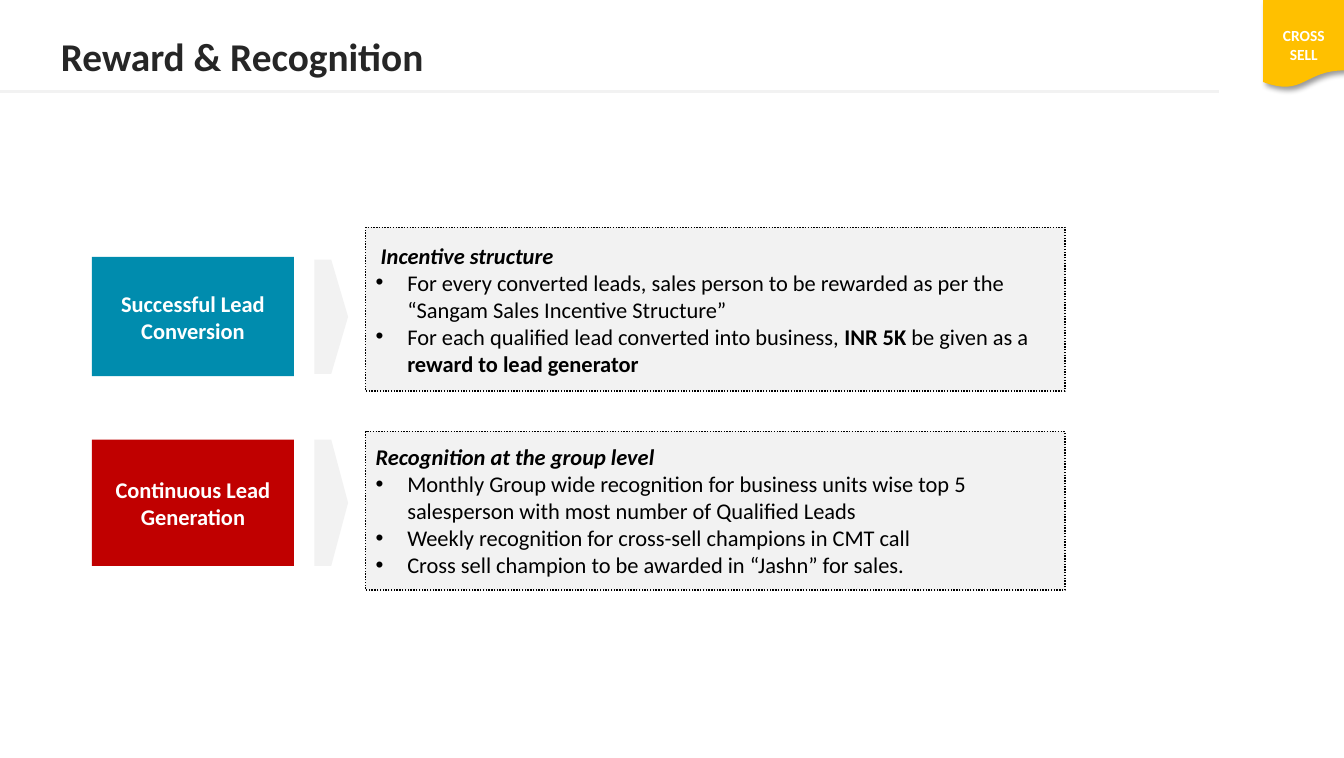
"""Build the Reward & Recognition slide with two reward rows."""
from dataclasses import dataclass

from lxml.etree import SubElement
from pptx import Presentation
from pptx.dml.color import RGBColor
from pptx.enum.dml import MSO_LINE
from pptx.enum.shapes import MSO_CONNECTOR, MSO_SHAPE
from pptx.enum.text import MSO_ANCHOR, PP_ALIGN
from pptx.oxml.ns import qn
from pptx.util import Pt


@dataclass(frozen=True)
class Theme:
    font: str = "Calibri"
    title_size: int = 28
    body_size: int = 16
    badge_size: int = 11
    white: str = "FFFFFF"
    black: str = "000000"
    heading: str = "262626"
    pale: str = "F2F2F2"
    amber: str = "FFC000"
    teal: str = "008CAE"
    red: str = "C00000"


theme = Theme()


def add_block(preset, left, top, width, height, color):
    block = slide.shapes.add_shape(preset, Pt(left), Pt(top), Pt(width), Pt(height))
    block.shadow.inherit = False
    block.fill.solid()
    block.fill.fore_color.rgb = RGBColor.from_string(color)
    block.line.fill.background()
    return block


def style(paragraph, size, color, bold=True, italic=False, align=PP_ALIGN.LEFT):
    paragraph.alignment = align
    for run in paragraph.runs:
        run.font.name = theme.font
        run.font.size = Pt(size)
        run.font.bold = bold
        run.font.italic = italic
        run.font.color.rgb = RGBColor.from_string(color)


deck = Presentation()
deck.slide_width, deck.slide_height = Pt(957.6), Pt(540)
slide = deck.slides.add_slide(deck.slide_layouts[6])

badge = add_block(MSO_SHAPE.FLOWCHART_DOCUMENT, 900, 0, 58, 62.6, theme.amber)
shadow = SubElement(badge.shadow._element.find(qn("a:effectLst")), qn("a:outerShdw"),
                    blurRad=str(Pt(4)), dist=str(Pt(3)), dir="2700000",
                    algn="tl", rotWithShape="0")
shade = SubElement(shadow, qn("a:srgbClr"), val=theme.black)
SubElement(shade, qn("a:alpha"), val="40000")
badge.text_frame.text = "CROSS SELL"
badge.text_frame.margin_top = Pt(17)
style(badge.text_frame.paragraphs[0], theme.badge_size, theme.white, align=PP_ALIGN.CENTER)

title = slide.shapes.add_textbox(Pt(30), Pt(19.4), Pt(612), Pt(36))
title.text_frame.word_wrap = True
title.text_frame.margin_left = Pt(13.5)
title.text_frame.text = "Reward & Recognition"
style(title.text_frame.paragraphs[0], theme.title_size, theme.heading)

rule = slide.shapes.add_connector(MSO_CONNECTOR.STRAIGHT, Pt(0), Pt(65), Pt(868.3), Pt(65))
rule.line.color.rgb = RGBColor.from_string(theme.pale)
rule.line.width = Pt(2.25)
SubElement(rule._element.spPr, qn("a:effectLst"))

rows = [
    dict(
        topic="Successful Lead Conversion", color=theme.teal,
        tag=(183, 85), arrow=(185, 81.4), panel=(162, 116.6),
        heading="Incentive structure", heading_indent=3.6,
        points=[
            [("For every converted leads, sales person to be rewarded as per the "
              "“Sangam Sales Incentive Structure”", False)],
            [("For each qualified lead converted into business, ", False), ("INR 5K", True),
             (" be given as a ", False), ("reward to lead generator", True)],
        ],
    ),
    dict(
        topic="Continuous Lead Generation", color=theme.red,
        tag=(313.2, 90), arrow=(313.2, 90), panel=(307.4, 113),
        heading="Recognition at the group level", heading_indent=0,
        points=[
            [("Monthly Group wide recognition for business units wise top 5 "
              "salesperson with most number of Qualified Leads", False)],
            [("Weekly recognition for cross-sell champions in CMT call", False)],
            [("Cross sell champion to be awarded in “Jashn” for sales.", False)],
        ],
    ),
]

for row in rows:
    top, height = row["tag"]
    tag = add_block(MSO_SHAPE.RECTANGLE, 65.5, top, 144, height, row["color"])
    tag.text_frame.text = row["topic"]
    style(tag.text_frame.paragraphs[0], theme.body_size, theme.white, align=PP_ALIGN.CENTER)

    top, height = row["arrow"]
    add_block(MSO_SHAPE.PENTAGON, 224, top, 24, height, theme.pale)

    top, height = row["panel"]
    panel = add_block(MSO_SHAPE.RECTANGLE, 260.6, top, 498.2, height, theme.pale)
    panel.line.color.rgb = RGBColor.from_string(theme.black)
    panel.line.width = Pt(1)
    panel.line.dash_style = MSO_LINE.ROUND_DOT
    details = panel.text_frame
    details.vertical_anchor = MSO_ANCHOR.MIDDLE
    details.text = row["heading"]
    heading = details.paragraphs[0]
    heading._p.get_or_add_pPr().set("marL", str(Pt(row["heading_indent"])))
    style(heading, theme.body_size, theme.black, italic=True)

    for pieces in row["points"]:
        point = details.add_paragraph()
        layout = point._p.get_or_add_pPr()
        layout.set("marL", str(Pt(22.5)))
        layout.set("indent", str(-Pt(22.5)))
        SubElement(layout, qn("a:buFont"), typeface="Arial")
        SubElement(layout, qn("a:buChar"), char="•")
        for wording, _ in pieces:
            point.add_run().text = wording
        style(point, theme.body_size, theme.black)
        for run, (_, bold) in zip(point.runs, pieces):
            run.font.bold = bold

deck.save("out.pptx")
